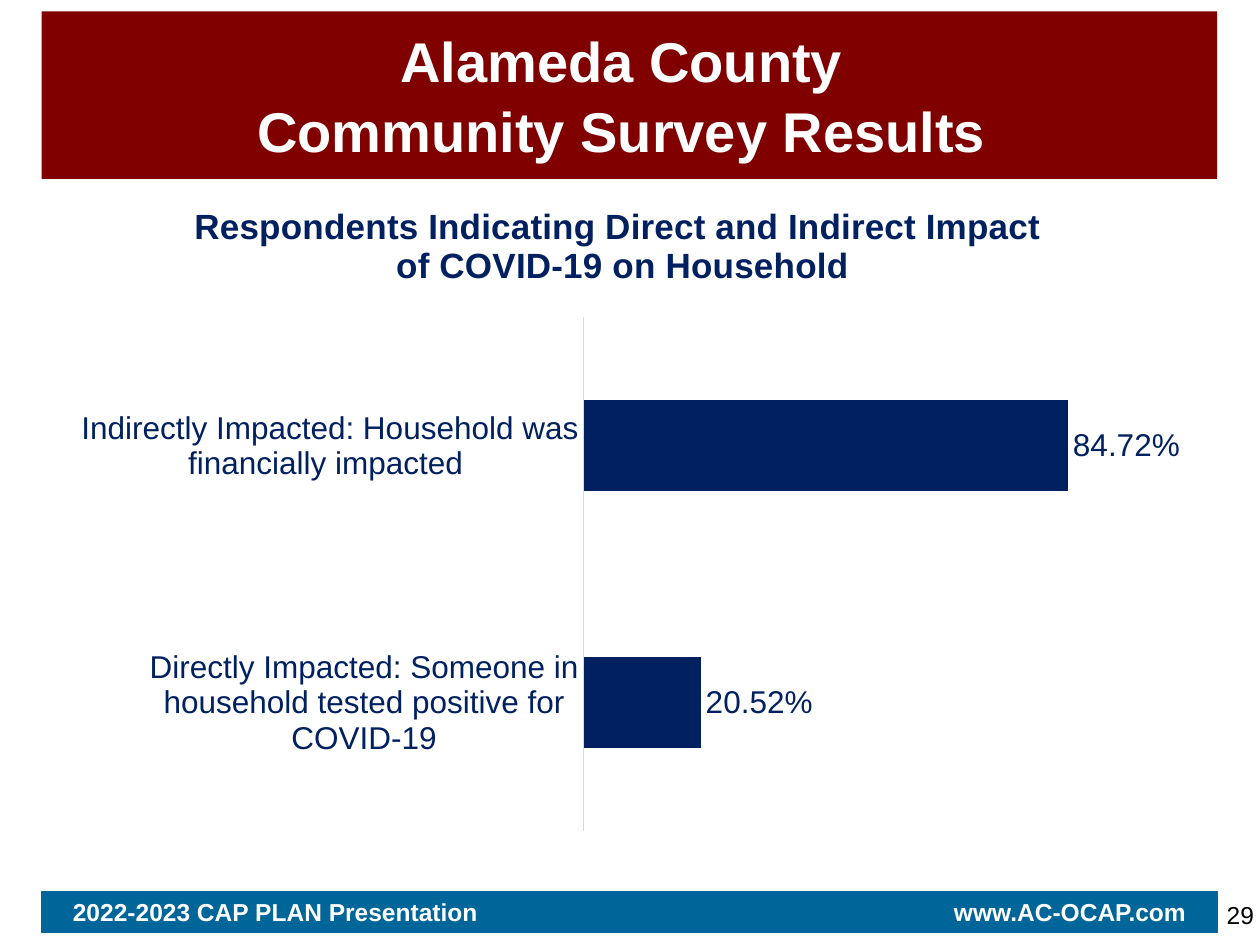
import pptx
import pptx.chart.data
import pptx.dml.color
import pptx.enum.chart
import pptx.enum.shapes
import pptx.enum.text
import pptx.oxml
import pptx.oxml.ns
import pptx.util
from pptx.util import Cm, Pt

ALIGN = pptx.enum.text.PP_ALIGN
FONT = "Arial"
NAVY, MAROON, TEAL, WHITE = "002060", "800000", "006699", "FFFFFF"
MARGIN, BAND_W = 0.84, 23.7
FOOTER_TOP, FOOTER_H, FOOTER_INSET = 17.98, 0.81, 0.63

HEADING = ["Alameda County ", "Community Survey Results "]
FOOTER = ["2022-2023 CAP PLAN Presentation", "www.AC-OCAP.com"]
PAGE = "29"
CHART_TITLE = ["Respondents Indicating Direct and Indirect Impact  ", "of COVID-19 on Household "]
IMPACTS = [
    ("Directly Impacted: Someone in household tested positive for COVID-19", 0.2052),
    ("Indirectly Impacted: Household was financially impacted ", 0.8472),
]
PLOT = {"x": 0.462, "y": 0.205, "w": 0.445, "h": 0.777}


def rgb(color):
    return pptx.dml.color.RGBColor.from_string(color)


def style(font, size, color, bold=False):
    font.name, font.size, font.bold = FONT, Pt(size), bold
    font.color.rgb = rgb(color)


def write(tf, lines, size, color, bold=False, align=ALIGN.CENTER, before=0):
    for i, line in enumerate(lines):
        p = tf.add_paragraph() if i else tf.paragraphs[0]
        p.alignment = align
        p.space_before = Pt(before)
        r = p.add_run()
        r.text = line
        style(r.font, size, color, bold)


def band(s, top, height, color):
    sp = s.shapes.add_shape(pptx.enum.shapes.MSO_SHAPE.RECTANGLE,
                            Cm(MARGIN), Cm(top), Cm(BAND_W), Cm(height))
    sp.shadow.inherit = False
    sp.fill.solid()
    sp.fill.fore_color.rgb = rgb(color)
    sp.line.fill.background()
    sp.text_frame.word_wrap = True
    sp.text_frame.vertical_anchor = pptx.enum.text.MSO_ANCHOR.MIDDLE
    return sp


def add_footer(s):
    sp = band(s, FOOTER_TOP, FOOTER_H, TEAL)
    sp.line.color.rgb = rgb(TEAL)
    sp.line.width = Pt(0.75)
    tf = sp.text_frame
    tf.margin_left = tf.margin_right = Cm(FOOTER_INSET)
    tf.margin_top = tf.margin_bottom = 0
    write(tf, ["\t".join(FOOTER)], 14, WHITE, True, ALIGN.LEFT)
    pPr = tf.paragraphs[0]._p.get_or_add_pPr()
    tabs = pptx.oxml.parse_xml(
        f'<a:tabLst {pptx.oxml.ns.nsdecls("a")}>'
        f'<a:tab pos="{Cm(BAND_W - 2 * FOOTER_INSET)}" algn="r"/></a:tabLst>')
    pPr.append(tabs)


def add_page_number(s):
    tf = s.shapes.add_textbox(Cm(24.31), Cm(18.01), Cm(1.22), Cm(0.81)).text_frame
    tf.word_wrap = True
    write(tf, [PAGE], 14, "000000", align=ALIGN.RIGHT)


def add_impact_chart(s):
    data = pptx.chart.data.CategoryChartData(number_format="0.00%")
    data.categories = [name for name, share in IMPACTS]
    data.add_series("Series 1", [share for name, share in IMPACTS])
    chart = s.shapes.add_chart(pptx.enum.chart.XL_CHART_TYPE.BAR_CLUSTERED,
                               Cm(0.99), Cm(3.66), Cm(23.32), Cm(13.34), data).chart
    style(chart.font, 10, "000000")
    chart.has_legend = False
    chart.has_title = True
    write(chart.chart_title.text_frame, CHART_TITLE, 20, NAVY, True)
    chart.chart_title.include_in_layout = False

    none = pptx.enum.chart.XL_TICK_MARK.NONE
    cat = chart.category_axis
    cat.major_tick_mark = cat.minor_tick_mark = none
    cat.format.line.color.rgb = rgb("D9D9D9")
    cat.format.line.width = Pt(0.75)
    style(cat.tick_labels.font, 18, NAVY)
    val = chart.value_axis
    val.minimum_scale, val.maximum_scale = 0, 0.9
    val.has_major_gridlines = False
    val.visible = False

    plot = chart.plots[0]
    plot.gap_width = 182
    plot.vary_by_categories = False
    fill = plot.series[0].format.fill
    fill.solid()
    fill.fore_color.rgb = rgb(NAVY)
    labels = plot.series[0].data_labels
    labels.show_value = True
    labels.number_format, labels.number_format_is_linked = "0.00%", False
    labels.position = pptx.enum.chart.XL_LABEL_POSITION.OUTSIDE_END
    style(labels.font, 18, NAVY)

    area = chart._chartSpace.chart.plotArea
    for old in area.findall(pptx.oxml.ns.qn("c:layout")):
        area.remove(old)
    sizes = "".join(f'<c:{key} val="{value}"/>' for key, value in PLOT.items())
    area.insert(0, pptx.oxml.parse_xml(
        f'<c:layout {pptx.oxml.ns.nsdecls("c")}><c:manualLayout>'
        '<c:layoutTarget val="inner"/><c:xMode val="edge"/><c:yMode val="edge"/>'
        f'{sizes}</c:manualLayout></c:layout>'))


def main():
    prs = pptx.Presentation()
    prs.slide_width, prs.slide_height = Cm(25.4), Cm(19.05)
    s = prs.slides.add_slide(prs.slide_layouts[6])
    heading = band(s, 0.23, 3.38, MAROON)
    write(heading.text_frame, HEADING, 32, WHITE, True, before=2)
    add_page_number(s)
    add_footer(s)
    add_impact_chart(s)
    prs.save("out.pptx")


if __name__ == "__main__":
    main()
